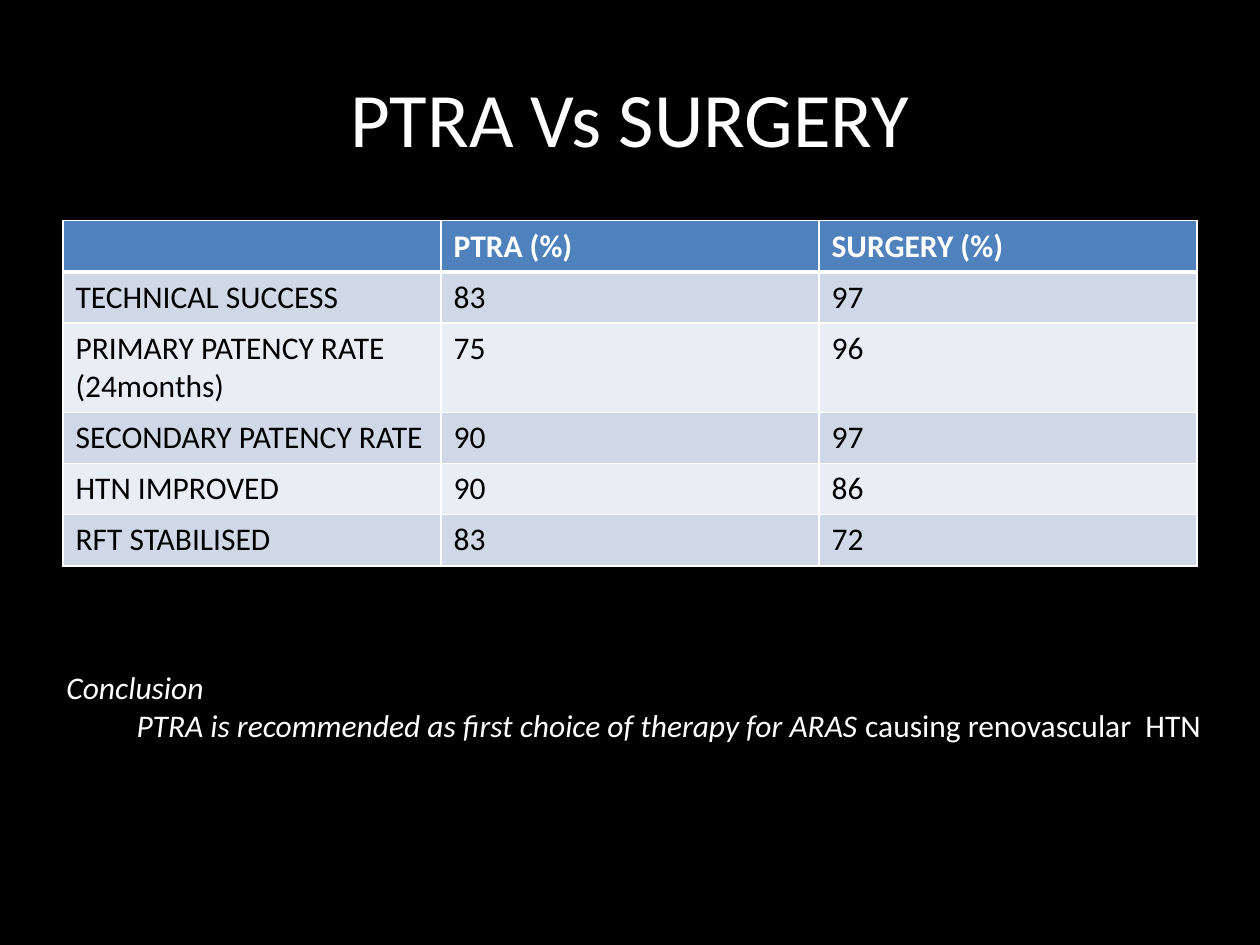
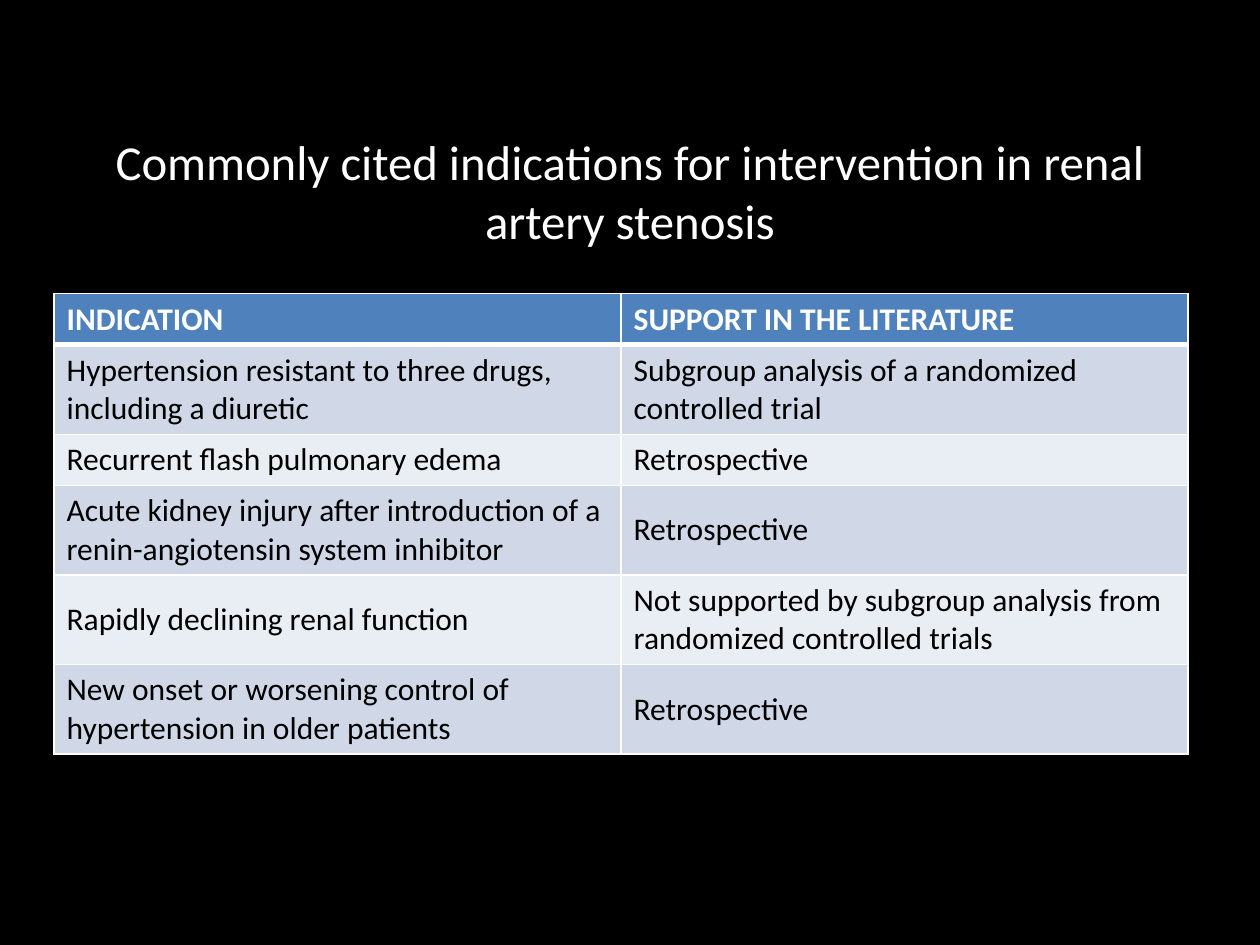
from lxml import etree
from pptx import Presentation
from pptx.dml.color import RGBColor
from pptx.enum.text import MSO_ANCHOR, PP_ALIGN
from pptx.oxml.ns import qn
from pptx.util import Cm, Pt

# Shared style
BLACK = RGBColor(0x00, 0x00, 0x00)
WHITE = RGBColor(0xFF, 0xFF, 0xFF)
HEADER_BLUE = RGBColor(0x4F, 0x81, 0xBD)
BAND_DARK = RGBColor(0xD0, 0xD8, 0xE8)
BAND_LIGHT = RGBColor(0xE9, 0xED, 0xF4)
FONT = "Calibri"
BODY_SIZE = 18
THIN, THICK = Pt(1), Pt(3)
ROW_HEIGHT, TALL_ROW_HEIGHT = Cm(1.03), Cm(1.8)
CONTENT_WIDTH = Cm(22.86)
TOP, MIDDLE = MSO_ANCHOR.TOP, MSO_ANCHOR.MIDDLE
CENTER = PP_ALIGN.CENTER
TITLE_ONLY = 5


class SlideBuilder:
    """Holds the deck style and the slide being filled."""

    def __init__(self):
        self.deck = Presentation()
        self.deck.slide_width, self.deck.slide_height = Cm(25.4), Cm(19.05)
        background = self.deck.slide_master.background.fill
        background.solid()
        background.fore_color.rgb = BLACK
        self.slide = None

    def style(self, span, size=BODY_SIZE, color=WHITE, bold=False, italic=False):
        font = span.font
        font.name, font.size = FONT, Pt(size)
        font.bold, font.italic = bold, italic
        font.color.rgb = color

    def new_slide(self, title, top, size):
        layout = self.deck.slide_layouts[TITLE_ONLY]
        self.slide = self.deck.slides.add_slide(layout)
        box = self.slide.shapes.title
        box.left, box.top = Cm(1.27), top
        box.width, box.height = CONTENT_WIDTH, Cm(3.18)
        frame = box.text_frame
        frame.text = title
        frame.vertical_anchor = MIDDLE
        para = frame.paragraphs[0]
        para.alignment = CENTER
        self.style(para.runs[0], size)

    def cell_border(self, cell, side, width):
        properties = cell._tc.get_or_add_tcPr()
        line = etree.SubElement(properties, qn(f"a:ln{side}"), w=str(width))
        fill = etree.SubElement(line, qn("a:solidFill"))
        etree.SubElement(fill, qn("a:srgbClr"), val=str(WHITE))

    def table(self, left, top, rows, tall_rows, anchor):
        heights = [TALL_ROW_HEIGHT if index in tall_rows else ROW_HEIGHT
                   for index in range(len(rows))]
        columns = len(rows[0])
        table = self.slide.shapes.add_table(
            len(rows), columns, left, top, CONTENT_WIDTH, sum(heights)).table
        for column in table.columns:
            column.width = CONTENT_WIDTH // columns
        for row_index, values in enumerate(rows):
            table.rows[row_index].height = heights[row_index]
            is_header = row_index == 0
            band = BAND_DARK if row_index % 2 else BAND_LIGHT
            for column_index, value in enumerate(values):
                cell = table.cell(row_index, column_index)
                cell.text = value
                cell.vertical_anchor = anchor
                for span in cell.text_frame.paragraphs[0].runs:
                    self.style(span, color=WHITE if is_header else BLACK,
                               bold=is_header)
                # The rule under the header is thicker than the others
                for side in "LRTB":
                    under_header = (row_index, side) in ((0, "B"), (1, "T"))
                    self.cell_border(cell, side, THICK if under_header else THIN)
                cell.fill.solid()
                cell.fill.fore_color.rgb = HEADER_BLUE if is_header else band

    def conclusion(self, heading, emphasis, ending):
        box = self.slide.shapes.add_textbox(Cm(1.09), Cm(13.34), Cm(23.45), Cm(2.57))
        frame = box.text_frame
        frame.word_wrap = True
        frame.text = heading
        self.style(frame.paragraphs[0].runs[0], italic=True)
        para = frame.add_paragraph()
        para.level = 1
        para._p.get_or_add_pPr().set("marL", str(Cm(1.27)))
        for text, italic in ((emphasis, True), (ending, False)):
            span = para.add_run()
            span.text = text
            self.style(span, italic=italic)


def main():
    builder = SlideBuilder()

    # Slide 1: outcome comparison
    builder.new_slide("PTRA Vs SURGERY", Cm(0.76), 44)
    outcomes = [
        ("", "PTRA (%)", "SURGERY (%)"),
        ("TECHNICAL SUCCESS", "83", "97"),
        ("PRIMARY PATENCY RATE (24months)", "75", "96"),
        ("SECONDARY PATENCY RATE", "90", "97"),
        ("HTN IMPROVED", "90", "86"),
        ("RFT STABILISED", "83", "72"),
    ]
    builder.table(Cm(1.27), Cm(4.45), outcomes, {2}, TOP)
    builder.conclusion(
        "Conclusion",
        " PTRA is recommended as first choice of therapy for ARAS ",
        "causing renovascular  HTN")

    # Slide 2: indications and their evidence
    builder.new_slide(
        "Commonly cited indications for intervention in renal artery stenosis",
        Cm(2.25), 27.9)
    indications = [
        ("INDICATION", "SUPPORT IN THE LITERATURE"),
        ("Hypertension resistant to three drugs, including a diuretic",
         "Subgroup analysis of a randomized controlled trial"),
        ("Recurrent flash pulmonary edema", "Retrospective"),
        ("Acute kidney injury after introduction of a "
         "renin-angiotensin system inhibitor", "Retrospective"),
        ("Rapidly declining renal function",
         "Not supported by subgroup analysis from randomized controlled trials"),
        ("New onset or worsening control of hypertension in older patients",
         "Retrospective"),
    ]
    builder.table(Cm(1.09), Cm(5.92), indications, {1, 3, 4, 5}, MIDDLE)

    builder.deck.save("out.pptx")


if __name__ == "__main__":
    main()
